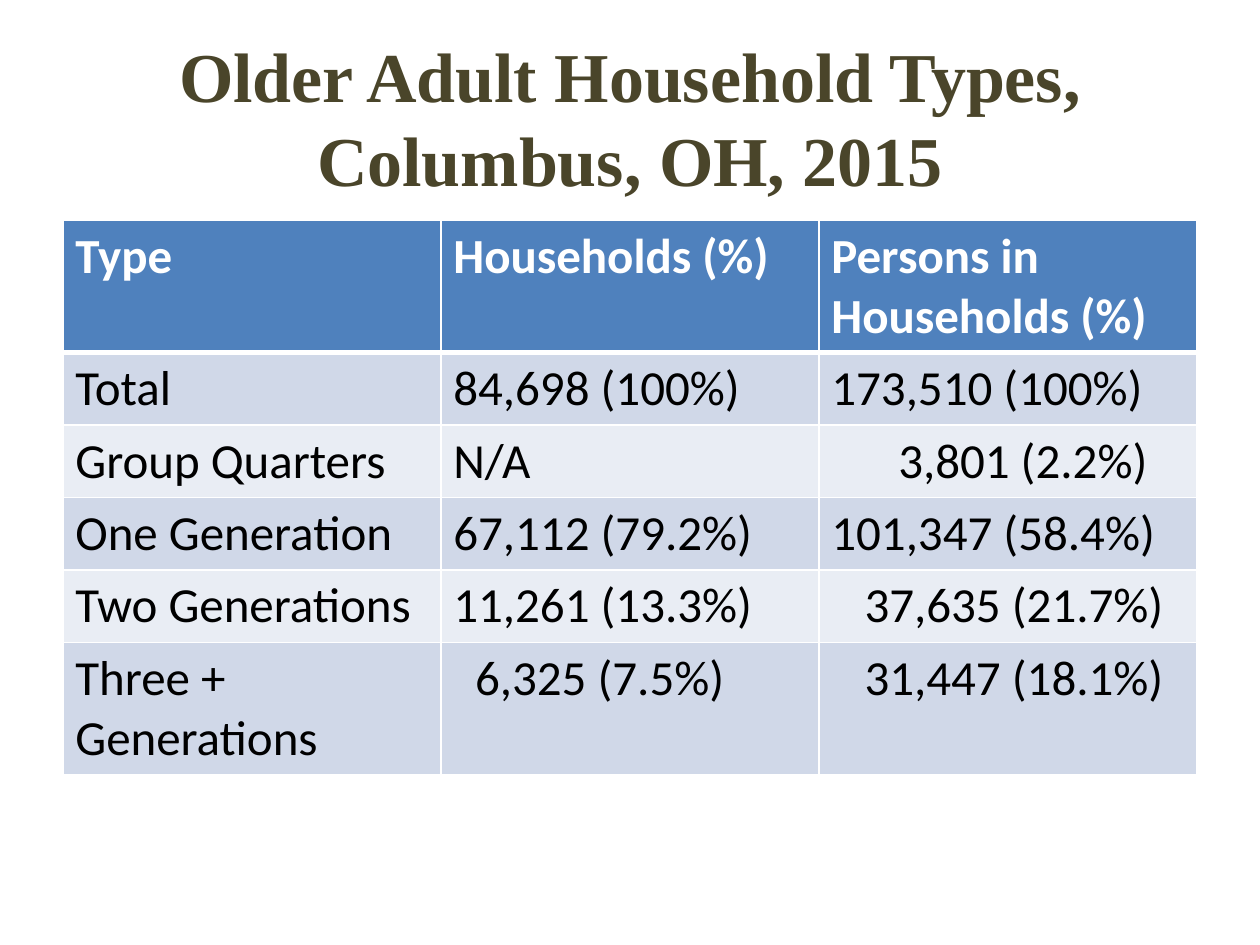
from dataclasses import dataclass

from lxml.etree import SubElement
from pptx import Presentation
from pptx.dml.color import RGBColor
from pptx.enum.text import MSO_ANCHOR, PP_ALIGN
from pptx.oxml.ns import qn
from pptx.slide import Slide
from pptx.table import _Cell
from pptx.util import Cm, Pt


@dataclass(frozen=True)
class Theme:
    title_font: str = "Times New Roman"
    body_font: str = "Calibri"
    title_size: int = 40
    body_size: int = 28
    title: str = "4A452A"
    header: str = "4F81BD"
    header_text: str = "FFFFFF"
    body_text: str = "000000"
    bands: tuple[str, str] = ("D0D8E8", "E9EDF4")
    border: str = "FFFFFF"
    thin: int = 1
    thick: int = 3


@dataclass(frozen=True)
class Entry:
    text: str
    indent: float = 0  # cm


@dataclass(frozen=True)
class Row:
    entries: tuple[Entry, Entry, Entry]
    lines: int = 1


THEME = Theme()
LEFT, WIDTH = Cm(1.27), Cm(22.86)
ROW_HEIGHTS = {1: Cm(1.46), 2: Cm(2.66)}
CELL_MARGIN = 0.25

ROWS = [
    Row((Entry("Type"), Entry("Households (%)"), Entry("Persons in Households (%)")), 2),
    Row((Entry("Total"), Entry("84,698 (100%)"), Entry("173,510 (100%)"))),
    Row((Entry("Group Quarters"), Entry("N/A"), Entry("3,801 (2.2%)", 1.35))),
    Row((Entry("One Generation"), Entry("67,112 (79.2%)"), Entry("101,347 (58.4%)"))),
    Row((Entry("Two Generations"), Entry("11,261 (13.3%)"), Entry("37,635 (21.7%)", 0.67))),
    Row((Entry("Three + Generations"), Entry("6,325 (7.5%)", 0.44),
         Entry("31,447 (18.1%)", 0.67)), 2),
]


def add_title(s: Slide, text: str) -> None:
    tf = s.shapes.add_textbox(LEFT, Cm(0.76), WIDTH, Cm(3.18)).text_frame
    tf.word_wrap = True
    tf.vertical_anchor = MSO_ANCHOR.MIDDLE
    tf.text = text
    p = tf.paragraphs[0]
    p.alignment = PP_ALIGN.CENTER
    font = p.runs[0].font
    font.name, font.size, font.bold = THEME.title_font, Pt(THEME.title_size), True
    font.color.rgb = RGBColor.from_string(THEME.title)


def set_borders(cell: _Cell, top: int, bottom: int) -> None:
    """Draw all four sides; call before setting the fill, which must follow."""
    tc_pr = cell._tc.get_or_add_tcPr()
    sides = {"lnL": THEME.thin, "lnR": THEME.thin, "lnT": top, "lnB": bottom}
    for side, width in sides.items():
        line = SubElement(tc_pr, qn(f"a:{side}"), w=str(Pt(width)))
        fill = SubElement(line, qn("a:solidFill"))
        SubElement(fill, qn("a:srgbClr"), val=THEME.border)


def fill_cell(cell: _Cell, entry: Entry, row: int) -> None:
    is_header = row == 0
    set_borders(cell, THEME.thick if row == 1 else THEME.thin,
                THEME.thick if is_header else THEME.thin)
    cell.fill.solid()
    cell.fill.fore_color.rgb = RGBColor.from_string(
        THEME.header if is_header else THEME.bands[(row - 1) % 2])
    cell.margin_left = Cm(CELL_MARGIN + entry.indent)
    cell.text_frame.text = entry.text
    font = cell.text_frame.paragraphs[0].runs[0].font
    font.name, font.size, font.bold = THEME.body_font, Pt(THEME.body_size), is_header
    font.color.rgb = RGBColor.from_string(
        THEME.header_text if is_header else THEME.body_text)


def add_household_table(s: Slide, rows: list[Row]) -> None:
    columns = len(rows[0].entries)
    height = sum(ROW_HEIGHTS[row.lines] for row in rows)
    table = s.shapes.add_table(len(rows), columns, LEFT, Cm(4.45), WIDTH, height).table
    for i, row in enumerate(rows):
        table.rows[i].height = ROW_HEIGHTS[row.lines]
        for j, entry in enumerate(row.entries):
            fill_cell(table.cell(i, j), entry, i)


def main() -> None:
    prs = Presentation()
    prs.slide_width, prs.slide_height = Cm(25.4), Cm(19.05)
    s = prs.slides.add_slide(prs.slide_layouts[6])
    add_title(s, "Older Adult Household Types, Columbus, OH, 2015")
    add_household_table(s, ROWS)
    prs.save("out.pptx")


if __name__ == "__main__":
    main()
